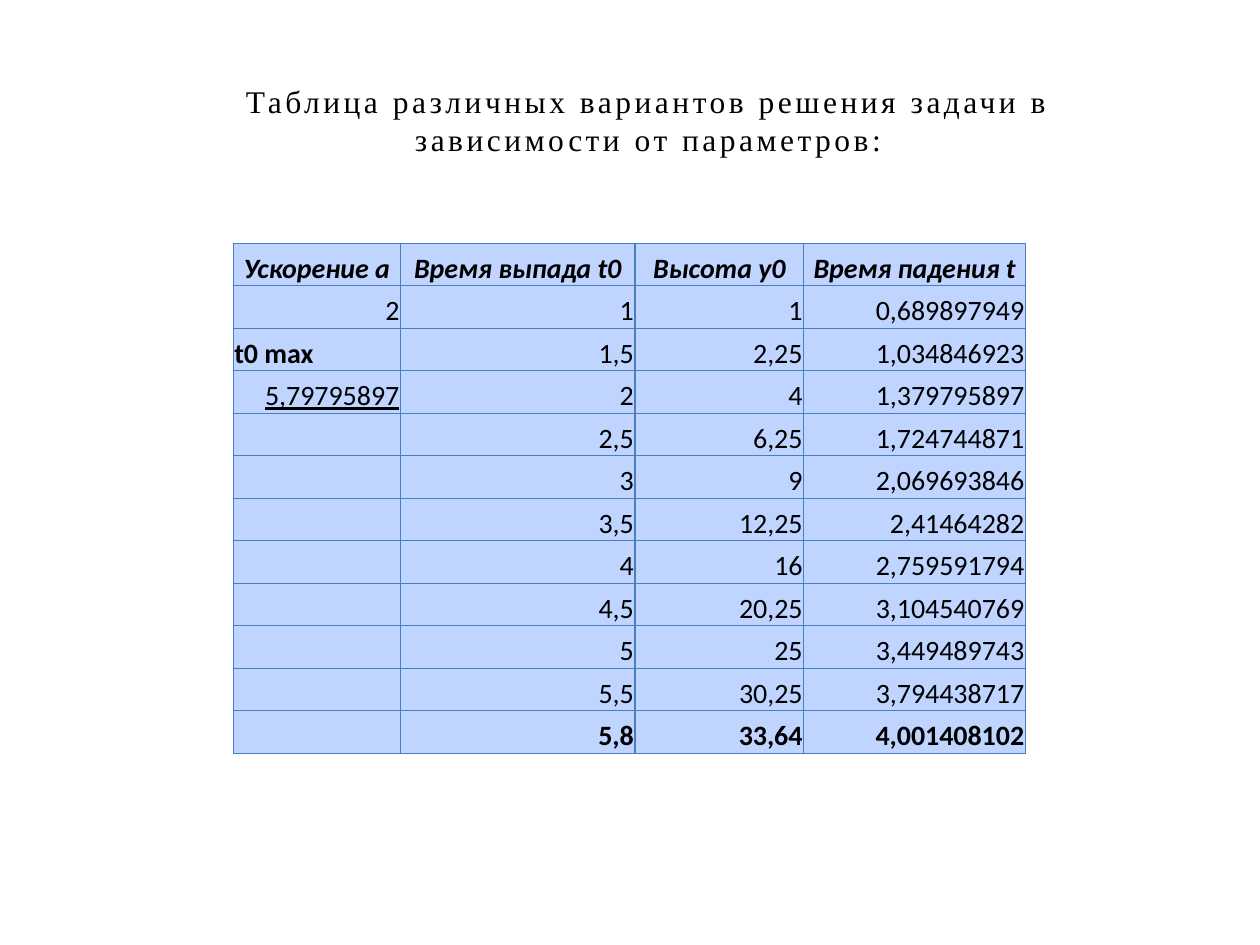
from dataclasses import dataclass

from lxml.etree import SubElement
from pptx import Presentation
from pptx.dml.color import RGBColor as RGB
from pptx.enum.text import MSO_ANCHOR as Anchor, PP_ALIGN as Align
from pptx.oxml.ns import qn
from pptx.util import Inches, Pt


@dataclass(frozen=True)
class Theme:
    ink: str = "000000"
    fill: str = "BFD4FF"
    edge: str = "4B7EBC"
    line: float = 0.75
    head: str = "Times New Roman"
    body: str = "Calibri"
    big: int = 18
    small: int = 16


TITLE = "Таблица различных вариантов решения задачи в зависимости от параметров:"
HEADS = ["Ускорение a", "Время выпада t0", "Высота у0", "Время падения t"]
SIDE = ["2", "t0 max", "5,79795897"]
DATA = [
    ("1", "1", "0,689897949"),
    ("1,5", "2,25", "1,034846923"),
    ("2", "4", "1,379795897"),
    ("2,5", "6,25", "1,724744871"),
    ("3", "9", "2,069693846"),
    ("3,5", "12,25", "2,41464282"),
    ("4", "16", "2,759591794"),
    ("4,5", "20,25", "3,104540769"),
    ("5", "25", "3,449489743"),
    ("5,5", "30,25", "3,794438717"),
    ("5,8", "33,64", "4,001408102"),
]
WIDTHS = [1.33, 1.86, 1.34, 1.76]


def write(frame, text, *, face, size, ink, align=Align.RIGHT,
          bold=False, slant=False, under=False, gap=0):
    """Put one formatted run into a text frame."""
    para = frame.paragraphs[0]
    para.alignment = align
    run = para.add_run()
    run.text = text
    font = run.font
    font.name, font.size = face, Pt(size)
    font.bold, font.italic, font.underline = bold, slant, under
    font.color.rgb = RGB.from_string(ink)
    if gap:
        run._r.get_or_add_rPr().set("spc", str(gap * 100))


class Deck:
    def __init__(self, theme):
        self.theme = theme
        self.prs = Presentation()
        self.prs.slide_width, self.prs.slide_height = Inches(10), Inches(7.5)
        self.slide = self.prs.slides.add_slide(self.prs.slide_layouts[5])

    def title(self, text, x, y, w, h):
        box = self.slide.shapes.title
        box.left, box.top = Inches(x), Inches(y)
        box.width, box.height = Inches(w), Inches(h)
        frame = box.text_frame
        frame.word_wrap = True
        frame.vertical_anchor = Anchor.MIDDLE
        look = self.theme
        write(frame, text, face=look.head, size=look.big, ink=look.ink,
              align=Align.CENTER, gap=2)

    def cell(self, cell):
        """Set margins, borders and fill of a table cell."""
        cell.margin_left = cell.margin_right = cell.margin_top = Inches(0.01)
        cell.margin_bottom = 0
        cell.vertical_anchor = Anchor.BOTTOM
        props = cell._tc.get_or_add_tcPr()
        for side in ("lnL", "lnR", "lnT", "lnB"):
            line = SubElement(props, qn(f"a:{side}"), w=str(Pt(self.theme.line)))
            paint = SubElement(line, qn("a:solidFill"))
            SubElement(paint, qn("a:srgbClr"), val=self.theme.edge)
        cell.fill.solid()
        cell.fill.fore_color.rgb = RGB.from_string(self.theme.fill)

    def table(self, rows, widths, x, y, h, style):
        """Add a table; style(row, col) gives the format of a cell's text."""
        table = self.slide.shapes.add_table(
            len(rows), len(widths), Inches(x), Inches(y),
            Inches(sum(widths)), Inches(h)).table
        table.first_row = table.horz_banding = False
        for col, width in zip(table.columns, widths):
            col.width = Inches(width)
        look = self.theme
        for r, row in enumerate(rows):
            for c, text in enumerate(row):
                cell = table.cell(r, c)
                self.cell(cell)
                if text:
                    write(cell.text_frame, text, face=look.body,
                          size=look.small, ink=look.ink, **style(r, c))


def style(row, col):
    if row == 0:
        return dict(align=Align.CENTER, bold=True, slant=True)
    if (row, col) == (2, 0):
        return dict(align=Align.LEFT, bold=True)
    return dict(bold=row == len(DATA), under=(row, col) == (3, 0))


def main():
    deck = Deck(Theme())
    # Heading
    deck.title(TITLE, 1.06, 0.6, 8.17, 0.71)
    # Results, with the side notes in the first column
    side = SIDE + [""] * (len(DATA) - len(SIDE))
    rows = [HEADS] + [[note, *vals] for note, vals in zip(side, DATA)]
    deck.table(rows, WIDTHS, 1.85, 1.93, 4.05, style)
    deck.prs.save("out.pptx")


if __name__ == "__main__":
    main()
